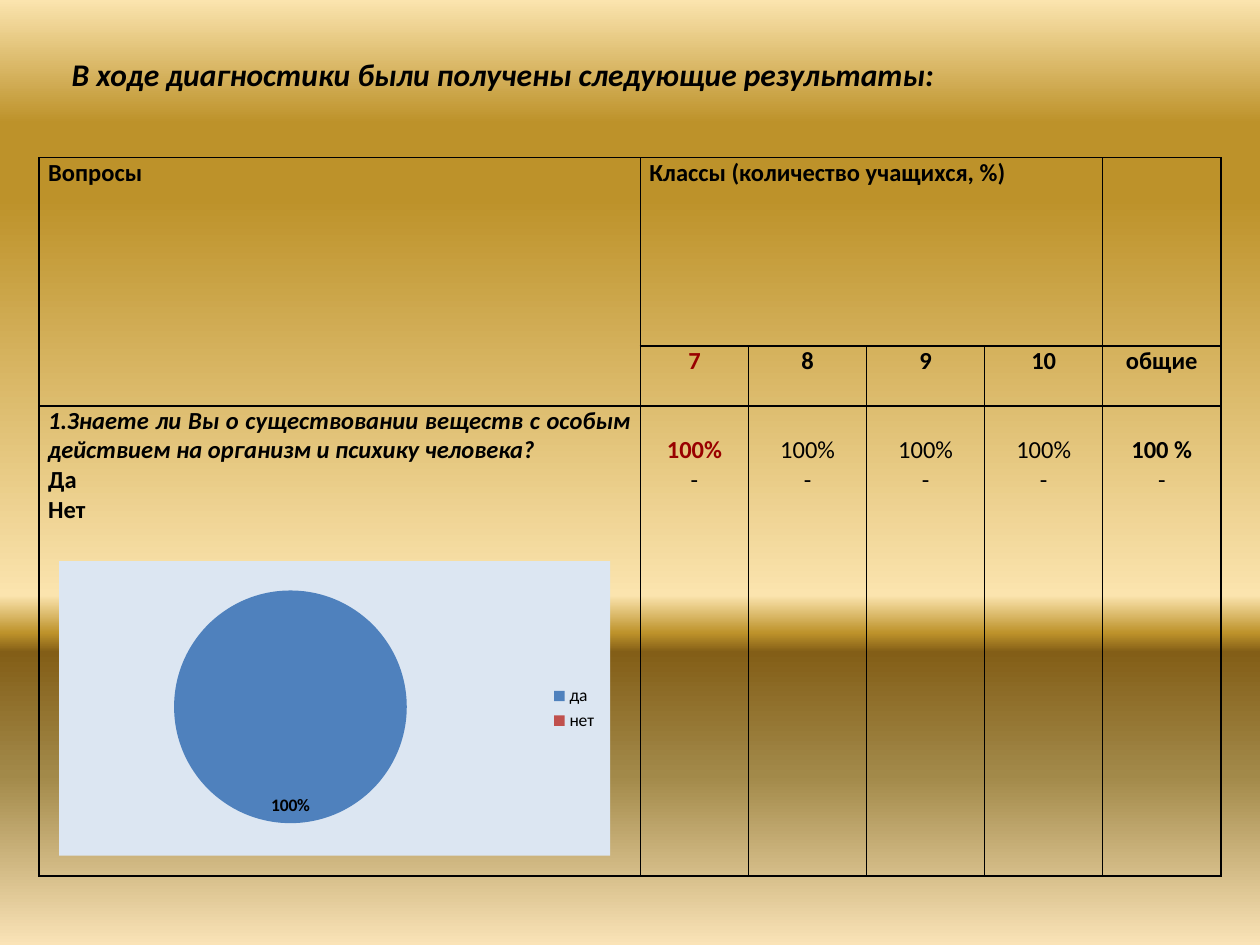
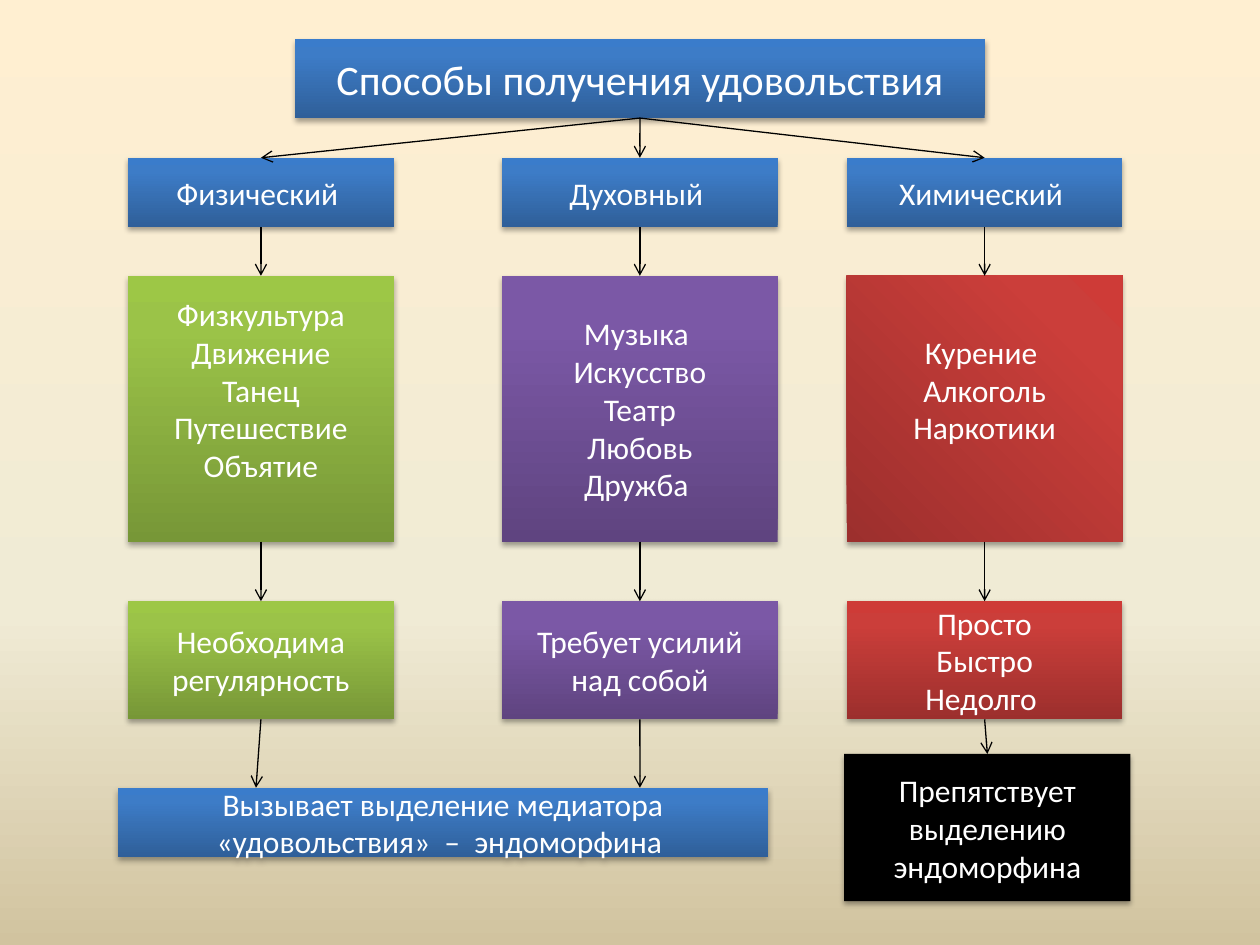
from lxml import etree
from pptx import Presentation
from pptx.chart.data import CategoryChartData
from pptx.dml.color import RGBColor
from pptx.enum.chart import XL_CHART_TYPE as CHART, XL_LABEL_POSITION as LABEL, XL_LEGEND_POSITION as LEGEND
from pptx.enum.shapes import MSO_CONNECTOR as CONN, MSO_SHAPE as SHAPE
from pptx.enum.text import MSO_ANCHOR as ANCHOR, MSO_AUTO_SIZE as AUTO, PP_ALIGN as ALIGN
from pptx.oxml import parse_xml
from pptx.oxml.ns import nsdecls, qn
from pptx.util import Cm, Pt

# Shared colours and styles
FONT = "Calibri"
BLACK, WHITE, DARK_RED = "000000", "FFFFFF", "990000"
GOLD = [(0, "FBE4AE"), (13, "BD922A"), (21, "BD922A"), (63, "FBE4AE"),
        (67, "BD922A"), (69, "835E17"), (82, "A28949"), (100, "FAE3B7")]
SAND = [(0, "FFEFD1"), (65, "F0EBD5"), (100, "D1C39F")]
BLUE = [(0, "2F5F99"), (80, "3D7CC7"), (100, "3A7CCB")]
GREEN = [(0, "779737"), (80, "9BC348"), (100, "9DC746")]
PURPLE = [(0, "5F4480"), (80, "7B58A6"), (100, "7C57A8")]
RED = [(0, "9C2F2D"), (80, "CB3E3A"), (100, "CE3B37")]
rgb = RGBColor.from_string


def add_run(p, text, size, color, bold=False, italic=False):
    r = p.add_run()
    r.text = text
    r.font.name, r.font.size = FONT, Pt(size)
    r.font.bold, r.font.italic = bold, italic
    r.font.color.rgb = rgb(color)


def set_gradient(fill, root, stops, angle):
    fill.gradient()
    grad = next(root.iter(qn("a:gradFill")))
    for child in list(grad):
        grad.remove(child)
    gs_list = etree.SubElement(grad, qn("a:gsLst"))
    for pos, color in stops:
        gs = etree.SubElement(gs_list, qn("a:gs"), pos=str(pos * 1000))
        etree.SubElement(gs, qn("a:srgbClr"), val=color)
    etree.SubElement(grad, qn("a:lin"), ang=str(angle * 60000), scaled="0")


prs = Presentation()
prs.slide_width, prs.slide_height = Cm(25.4), Cm(19.05)
title_only = prs.slide_layouts[5]

# Slide 1: survey results
s = prs.slides.add_slide(title_only)
set_gradient(s.background.fill, s._element, GOLD, 90)

title = s.shapes.title
title.left, title.top, title.width, title.height = Cm(1.19), Cm(0.99), Cm(23.4), Cm(2.57)
tf = title.text_frame
tf.auto_size, tf.vertical_anchor = AUTO.NONE, ANCHOR.TOP
p = tf.paragraphs[0]
p.alignment = ALIGN.LEFT
add_run(p, "В ходе диагностики были получены следующие результаты:", 18, BLACK, True, True)

# Results table: each run is (text, colour, bold, italic)
col_widths = [12.12, 2.18] + [2.38] * 4
row_heights = [3.79, 1.21, 9.48]
table = s.shapes.add_table(3, 6, Cm(0.79), Cm(3.18), Cm(sum(col_widths)), Cm(sum(row_heights))).table
table.first_row = table.horz_banding = False
for col, width in zip(table.columns, col_widths):
    col.width = Cm(width)
for row, height in zip(table.rows, row_heights):
    row.height = Cm(height)

cells = {
    (0, 0): [("Вопросы", BLACK, True, False)],
    (0, 1): [("Классы (количество учащихся, %)", BLACK, True, False)],
    (2, 0): [("1.Знаете ли Вы о существовании веществ с особым действием "
              "на организм и психику человека?", BLACK, True, True),
             ("Да ", BLACK, True, False),
             ("Нет", BLACK, True, False)],
}
classes = ["7", "8", "9", "10", "общие"]
shares = ["100%"] * 4 + ["100 %"]
for j, (name, share) in enumerate(zip(classes, shares), start=1):
    color = DARK_RED if j == 1 else BLACK
    cells[1, j] = [(name, color, True, False)]
    cells[2, j] = [(share, color, j in (1, 5), False), ("-", BLACK, False, False)]

for i in range(3):
    for j in range(6):
        cell = table.cell(i, j)
        cell.fill.background()
        cell.margin_left = cell.margin_right = Cm(0.18)
        cell.margin_top = Cm(0.6) if i == 2 and j else 0
        cell.margin_bottom = 0
        tc_pr = cell._tc.get_or_add_tcPr()
        for k, side in enumerate(["lnL", "lnR", "lnT", "lnB"]):
            tc_pr.insert(k, parse_xml(
                f'<a:{side} {nsdecls("a")} w="12700"><a:solidFill>'
                f'<a:srgbClr val="{BLACK}"/></a:solidFill></a:{side}>'))
        tf = cell.text_frame
        for k, (text, color, bold, italic) in enumerate(cells.get((i, j), [])):
            p = tf.add_paragraph() if k else tf.paragraphs[0]
            p.alignment = ALIGN.CENTER if i and j else ALIGN.JUSTIFY
            add_run(p, text, 14, color, bold, italic)
table.cell(0, 0).merge(table.cell(1, 0))
table.cell(0, 1).merge(table.cell(0, 4))

# Pie chart of the answers
data = CategoryChartData(number_format="0%")
data.categories = ["да", "нет"]
data.add_series("Series 1", [1, 0])
chart = s.shapes.add_chart(CHART.PIE, Cm(1.19), Cm(11.31), Cm(11.11), Cm(5.94), data).chart
chart.has_title = False
chart.font.name, chart.font.size = FONT, Pt(10)
chart.font.color.rgb = rgb(BLACK)
chart.has_legend = True
chart.legend.position = LEGEND.RIGHT
chart.legend.include_in_layout = False
plot = chart.plots[0]
plot.vary_by_categories = True
for k, color in enumerate(["4F81BD", "C0504D"]):
    fill = plot.series[0].points[k].format.fill
    fill.solid()
    fill.fore_color.rgb = rgb(color)
plot.has_data_labels = True
labels = plot.data_labels
labels.show_value, labels.show_percentage = True, False
labels.position = LABEL.INSIDE_END
labels.number_format, labels.number_format_is_linked = "0%;;", False
labels.font.name, labels.font.size, labels.font.bold = FONT, Pt(10), True
labels.font.color.rgb = rgb(BLACK)

# Chart background and plot position
chart_space = chart._chartSpace
chart_space.find(qn("c:chart")).addnext(parse_xml(
    f'<c:spPr {nsdecls("c", "a")}><a:solidFill><a:srgbClr val="DCE6F2"/></a:solidFill>'
    '<a:ln><a:noFill/></a:ln></c:spPr>'))
plot_area = next(chart_space.iter(qn("c:plotArea")))
for old in plot_area.findall(qn("c:layout")):
    plot_area.remove(old)
layout = etree.Element(qn("c:layout"))
manual = etree.SubElement(layout, qn("c:manualLayout"))
for tag, val in [("layoutTarget", "inner"), ("xMode", "edge"), ("yMode", "edge"),
                 ("x", "0.05"), ("y", "0.1"), ("w", "0.74"), ("h", "0.79")]:
    etree.SubElement(manual, qn(f"c:{tag}"), val=val)
plot_area.insert(0, layout)

# Slide 2: ways to get pleasure
s = prs.slides.add_slide(title_only)
set_gradient(s.background.fill, s._element, SAND, 90)

# Boxes: name, place, gradient or colour, angle, paragraphs
columns = [
    ("physical", 2.58, 5.36, GREEN, ["Физический "],
     ["Физкультура", "Движение", "Танец", "Путешествие", "Объятие"],
     ["Необходима регулярность"]),
    ("spiritual", 10.12, 5.56, PURPLE, ["Духовный "],
     ["Музыка ", "Искусство", "Театр", "Любовь", "Дружба "],
     ["Требует усилий над собой"]),
    ("chemical", 17.07, 5.56, RED, ["Химический "],
     ["Курение ", "Алкоголь", "Наркотики"],
     ["Просто", "Быстро", "Недолго "]),
]
boxes = [("title", (5.95, 0.79, 13.9, 1.59), BLUE, 270, ["Способы получения удовольствия"])]
for name, x, w, stops, kind, examples, trait in columns:
    boxes += [
        ((name, "kind"), (x, 3.18, w, 1.4), BLUE, 270, kind),
        ((name, "examples"), (x, 5.56, w, 5.36), stops, 315 if stops is RED else 270, examples),
        ((name, "trait"), (x, 12.12, w, 2.38), stops, 270, trait),
    ]
boxes += [
    ("release", (2.38, 15.88, 13.1, 1.4), BLUE, 270,
     ["Вызывает выделение медиатора «удовольствия»  –  эндоморфина "]),
    ("block", (17.02, 15.2, 5.77, 2.97), BLACK, 0, ["Препятствует выделению эндоморфина"]),
]

shapes = {}
for name, place, paint, angle, lines in boxes:
    x, y, w, h = map(Cm, place)
    if name == "title":
        sp = s.shapes.title
        sp.left, sp.top, sp.width, sp.height = x, y, w, h
    else:
        sp = s.shapes.add_shape(SHAPE.RECTANGLE, x, y, w, h)
    shapes[name] = sp
    if paint == BLACK:
        sp.fill.solid()
        sp.fill.fore_color.rgb = rgb(BLACK)
    else:
        set_gradient(sp.fill, sp._element, paint, angle)
    sp.line.fill.background()
    sp.shadow.inherit = False
    effects = sp._element.spPr.find(qn("a:effectLst"))
    shadow = etree.SubElement(effects, qn("a:outerShdw"), blurRad="40000", dist="23000",
                              dir="5400000", rotWithShape="0")
    shade = etree.SubElement(shadow, qn("a:srgbClr"), val=BLACK)
    etree.SubElement(shade, qn("a:alpha"), val="35000")
    tf = sp.text_frame
    tf.word_wrap, tf.auto_size, tf.vertical_anchor = True, AUTO.NONE, ANCHOR.MIDDLE
    if name in [("physical", "examples"), ("chemical", "examples")]:
        tf.margin_bottom = Cm(0.9)
    for k, text in enumerate(lines):
        p = tf.add_paragraph() if k else tf.paragraphs[0]
        p.alignment = ALIGN.CENTER
        add_run(p, text, 24 if name == "title" else 18, WHITE)

# Arrows: from a box to another box or to a point
links = []
for name, end in [("physical", (5.16, 15.88)), ("spiritual", (12.9, 15.88)), ("chemical", "block")]:
    links += [("title", (name, "kind")),
              ((name, "kind"), (name, "examples")),
              ((name, "examples"), (name, "trait")),
              ((name, "trait"), end)]
for start, end in links:
    x, y = (0, 0) if end in shapes else end
    arrow = s.shapes.add_connector(CONN.STRAIGHT, 0, 0, Cm(x), Cm(y))
    arrow.begin_connect(shapes[start], 2)
    if end in shapes:
        arrow.end_connect(shapes[end], 0)
    arrow.line.color.rgb = rgb(BLACK)
    arrow.line.width = Pt(0.75)
    etree.SubElement(arrow.line._get_or_add_ln(), qn("a:tailEnd"), type="arrow")
    etree.SubElement(arrow._element.spPr, qn("a:effectLst"))

prs.save("out.pptx")
